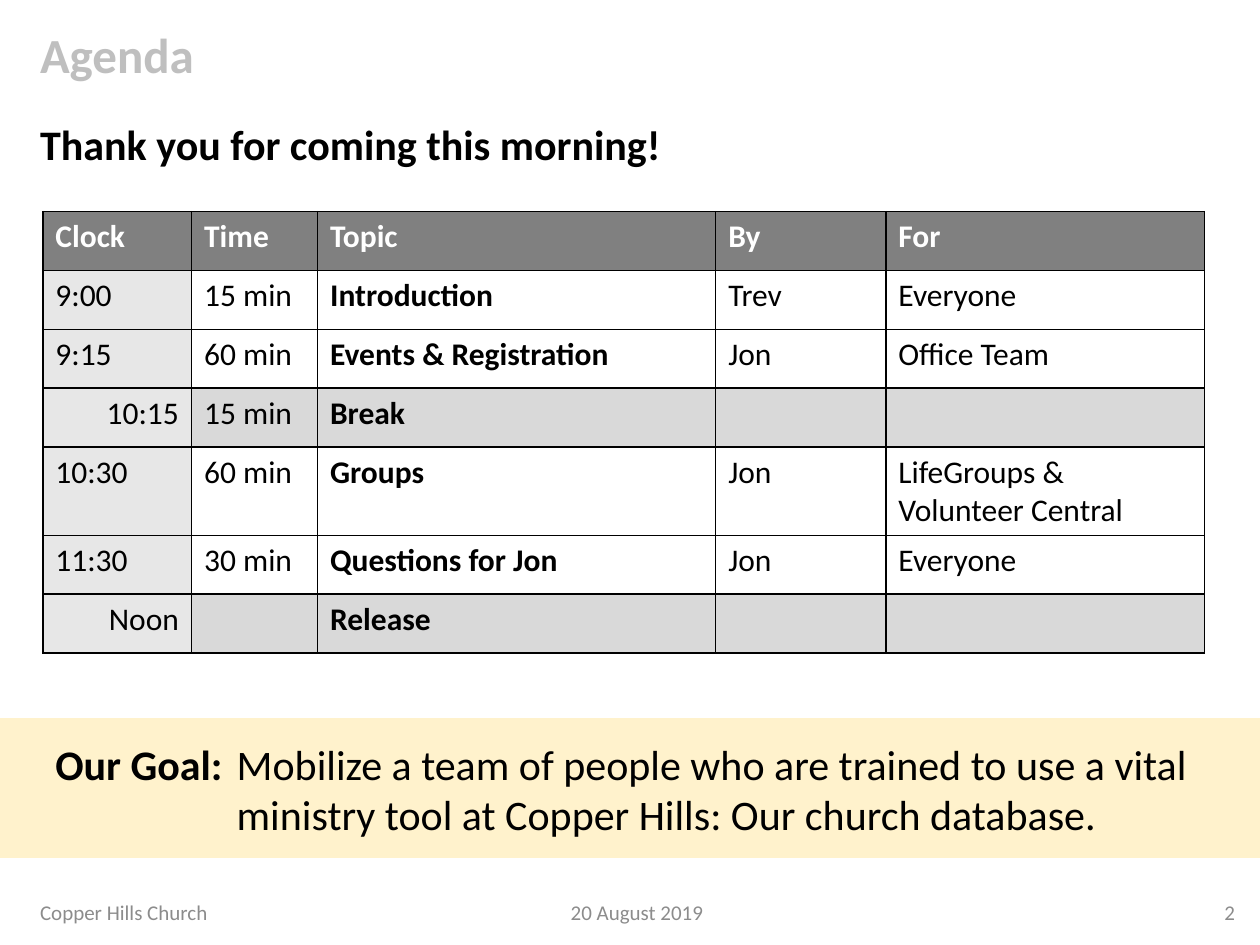
from dataclasses import dataclass

from lxml.etree import SubElement
from pptx import Presentation
from pptx.dml.color import RGBColor as Color
from pptx.enum.shapes import MSO_SHAPE as Shape
from pptx.enum.text import MSO_ANCHOR as Anchor, PP_ALIGN as Align
from pptx.oxml.ns import qn
from pptx.util import Emu, Inches, Pt


@dataclass(frozen=True)
class Theme:
    font: str = "Calibri"
    ink: str = "000000"
    paper: str = "FFFFFF"
    title: str = "BFBFBF"
    footer: str = "8C8C8C"
    header: str = "808080"
    clock: str = "E7E7E7"
    pause: str = "D9D9D9"
    band: str = "FFF2CC"
    title_size: int = 28
    lead_size: int = 24
    table_size: int = 18
    footer_size: int = 12


class AgendaPage:
    COLUMNS, ROWS = 100, 75

    def __init__(self, deck, theme):
        self.theme = theme
        self.column = deck.slide_width / self.COLUMNS
        self.row = deck.slide_height / self.ROWS
        self.page = deck.slides.add_slide(deck.slide_layouts[6])

    def area(self, left, top, width, height):
        return (Emu(round(left * self.column)), Emu(round(top * self.row)),
                Emu(round(width * self.column)), Emu(round(height * self.row)))

    def style(self, span, size, color, bold=False):
        font = span.font
        font.name, font.size, font.bold = self.theme.font, Pt(size), bold
        font.color.rgb = Color.from_string(color)

    def band(self, place, color):
        box = self.page.shapes.add_shape(Shape.RECTANGLE, *self.area(*place))
        box.shadow.inherit = False
        box.fill.solid()
        box.fill.fore_color.rgb = Color.from_string(color)
        box.line.fill.background()

    def text(self, place, spans, size, color, align=Align.LEFT,
             anchor=Anchor.TOP, spacing=1.0, hanging=0):
        box = self.page.shapes.add_textbox(*self.area(*place))
        frame = box.text_frame
        frame.word_wrap, frame.vertical_anchor = True, anchor
        para = frame.paragraphs[0]
        para.alignment, para.line_spacing = align, spacing
        if hanging:
            indent = round(hanging * self.column)
            properties = para._p.get_or_add_pPr()
            properties.set("marL", str(indent))
            properties.set("indent", str(-indent))
        for words, bold in spans:
            span = para.add_run()
            span.text = words
            self.style(span, size, color, bold)

    def footer(self, left, width, words, align):
        self.text((left, 71.1, width, 2.6), [(words, False)],
                  self.theme.footer_size, self.theme.footer, align, Anchor.MIDDLE)

    def borders(self, cell):
        properties = cell._tc.get_or_add_tcPr()
        for side in ("L", "R", "T", "B"):
            line = SubElement(properties, qn(f"a:ln{side}"), w=str(Pt(1)))
            fill = SubElement(line, qn("a:solidFill"))
            SubElement(fill, qn("a:srgbClr"), val=self.theme.ink)

    def cell(self, cell, words, fill, color, bold, align):
        self.borders(cell)
        cell.fill.solid()
        cell.fill.fore_color.rgb = Color.from_string(fill)
        cell.text = words
        para = cell.text_frame.paragraphs[0]
        para.alignment = align
        para.font.size = Pt(self.theme.table_size)
        for span in para.runs:
            self.style(span, self.theme.table_size, color, bold)

    def schedule(self, left, top, widths, height, header, sessions, pauses):
        theme = self.theme
        lines = [header, *sessions]
        place = self.area(left, top, sum(widths), height * len(lines))
        table = self.page.shapes.add_table(len(lines), len(widths), *place).table
        table.first_row = table.horz_banding = False
        for column, width in zip(table.columns, widths):
            column.width = Emu(round(width * self.column))
        for number, line in enumerate(lines):
            table.rows[number].height = Emu(round(height * self.row))
            is_header, is_pause = number == 0, line[2] in pauses
            for place, words in enumerate(line):
                is_clock = place == 0
                if is_header:
                    fill = theme.header
                elif is_clock:
                    fill = theme.clock
                else:
                    fill = theme.pause if is_pause else theme.paper
                self.cell(table.cell(number, place), words, fill,
                          theme.paper if is_header else theme.ink,
                          is_header or place == 2,
                          Align.RIGHT if is_clock and is_pause else Align.LEFT)


HEADER = ("Clock", "Time", "Topic", "By", "For")
SESSIONS = [
    ("9:00", "15 min", "Introduction", "Trev", "Everyone"),
    ("9:15", "60 min", "Events & Registration", "Jon", "Office Team"),
    ("10:15", "15 min", "Break", "", ""),
    ("10:30", "60 min", "Groups", "Jon", "LifeGroups & Volunteer Central"),
    ("11:30", "30 min", "Questions for Jon", "Jon", "Everyone"),
    ("Noon", "", "Release", "", ""),
]
GOAL = ("Mobilize a team of people who are trained to use a vital "
        "ministry tool at Copper Hills: Our church database.")


def main():
    deck = Presentation()
    deck.slide_width, deck.slide_height = Inches(10), Inches(7.5)
    theme = Theme()
    agenda = AgendaPage(deck, theme)
    agenda.band((0, 57, 100, 11.1), theme.band)
    agenda.text((2.2, 2.7, 64.4, 4.1), [("Agenda", True)], theme.title_size,
                theme.title, anchor=Anchor.MIDDLE, spacing=0.8)
    agenda.text((2.2, 9.4, 96.8, 8.7), [("Thank you for coming this morning!", True)],
                theme.lead_size, theme.ink, spacing=0.9)
    agenda.footer(39.3, 22.5, "20 August 2019", Align.CENTER)
    agenda.footer(2.2, 28.3, "Copper Hills Church", Align.LEFT)
    agenda.footer(90.9, 8.1, "2", Align.RIGHT)
    agenda.schedule(3.4, 16.8, (11.8, 10, 31.6, 13.5, 25.3), 4.67,
                    HEADER, SESSIONS, {"Break", "Release"})
    agenda.text((3.4, 58.1, 93.2, 9.1), [("Our Goal:\t", True), (GOAL, False)],
                theme.lead_size, theme.ink, hanging=14.4)
    deck.save("out.pptx")


if __name__ == "__main__":
    main()
